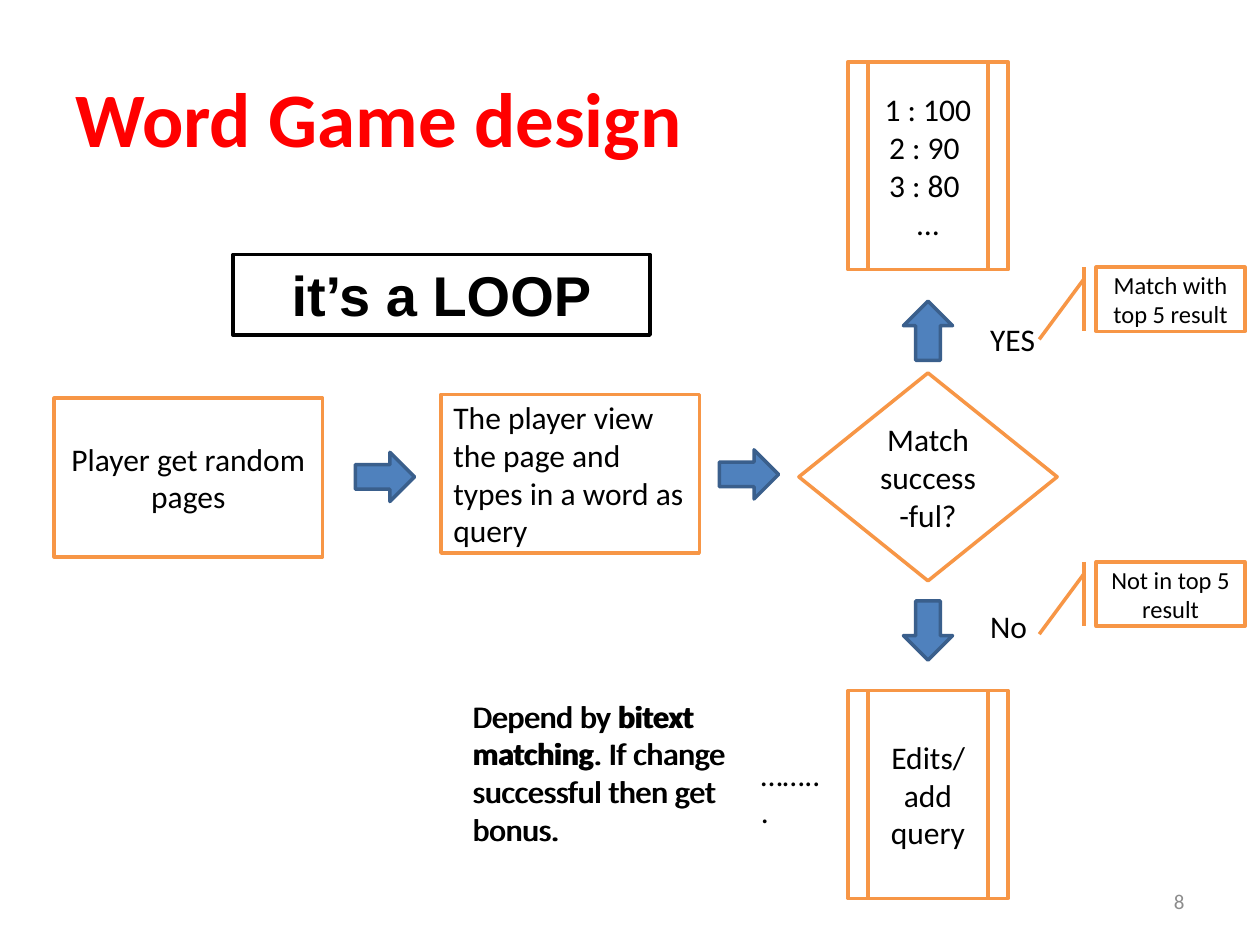
from dataclasses import dataclass

from pptx import Presentation
from pptx.dml.color import RGBColor
from pptx.enum.shapes import MSO_SHAPE as Shape
from pptx.enum.text import MSO_ANCHOR as Anchor, MSO_AUTO_SIZE as AutoSize, PP_ALIGN as Align
from pptx.util import Emu, Pt

EMU_PER_PX = 9144  # 100 px to the inch


@dataclass(frozen=True)
class Theme:
    paper: str = "FFFFFF"
    ink: str = "000000"
    title: str = "FF0000"
    outline: str = "F79646"
    arrow: str = "4F81BD"
    arrow_edge: str = "3A5F8C"
    muted: str = "8C8C8C"
    body_font: str = "Calibri"
    banner_font: str = "Arial"
    title_size: int = 44
    banner_size: int = 32
    body_size: int = 18
    callout_size: int = 14
    number_size: int = 12
    line_width: int = 2


THEME = Theme()


@dataclass(frozen=True)
class Box:
    left: int
    top: int
    width: int
    height: int

    def emu(self) -> list[Emu]:
        return [Emu(px * EMU_PER_PX) for px in (self.left, self.top, self.width, self.height)]


@dataclass(frozen=True)
class Style:
    size: int = THEME.body_size
    color: str = THEME.ink
    font: str = THEME.body_font
    bold: bool = False
    align: Align = Align.LEFT
    anchor: Anchor = Anchor.TOP
    grow: bool = False


@dataclass(frozen=True)
class Node:
    kind: Shape
    box: Box
    text: str
    style: Style
    edge: str = THEME.outline


@dataclass(frozen=True)
class Arrow:
    left: int
    top: int
    rotation: int = 0


@dataclass(frozen=True)
class Label:
    box: Box
    text: str
    style: Style


LABEL = Style(grow=True)
STEP = Style(align=Align.CENTER, anchor=Anchor.MIDDLE)
STEP_LEFT = Style(anchor=Anchor.MIDDLE)
CALLOUT = Style(size=THEME.callout_size, align=Align.CENTER, anchor=Anchor.MIDDLE)
BANNER = Style(size=THEME.banner_size, font=THEME.banner_font, bold=True,
               align=Align.CENTER, grow=True)
TITLE = Style(size=THEME.title_size, color=THEME.title, bold=True, anchor=Anchor.MIDDLE)
NUMBER = Style(size=THEME.number_size, color=THEME.muted, align=Align.RIGHT,
               anchor=Anchor.MIDDLE)

# Flow steps, outcomes, callouts and banner; a new line starts a paragraph
NODES = [
    Node(Shape.FLOWCHART_PROCESS, Box(43, 316, 213, 126), "Player get random pages", STEP),
    Node(Shape.FLOWCHART_PROCESS, Box(350, 313, 205, 126),
         "The player view the page and types in a word as\nquery", STEP_LEFT),
    Node(Shape.FLOWCHART_DECISION, Box(634, 296, 205, 165), "Match success-ful?", STEP),
    Node(Shape.FLOWCHART_PREDEFINED_PROCESS, Box(673, 49, 127, 165),
         "1 : 100\n2 : 90 \n3 : 80 \n…", STEP),
    Node(Shape.FLOWCHART_PREDEFINED_PROCESS, Box(673, 548, 127, 165), "Edits/add query", STEP),
    Node(Shape.LINE_CALLOUT_1_BORDER_AND_ACCENT_BAR, Box(870, 212, 118, 51),
         "Match with top 5 result", CALLOUT),
    Node(Shape.LINE_CALLOUT_1_BORDER_AND_ACCENT_BAR, Box(870, 446, 118, 51),
         "Not in top 5 result", CALLOUT),
    Node(Shape.RECTANGLE, Box(185, 202, 331, 64), "it’s a LOOP", BANNER, THEME.ink),
]

ARROWS = [Arrow(282, 359), Arrow(571, 357), Arrow(713, 243, 270), Arrow(713, 481, 90)]

# Double asterisks enclose bold words
BONUS = "Depend by **bitext matching**. If change successful then get bonus."
LABELS = [
    Label(Box(50, 30, 900, 125), "Word Game design", TITLE),
    Label(Box(776, 249, 94, 40), "YES", LABEL),
    Label(Box(776, 477, 63, 40), "No", LABEL),
    *(Label(Box(left, 548, 236, 131), BONUS, LABEL) for left in (366, 365)),
    Label(Box(594, 594, 71, 40), "……...", LABEL),
    Label(Box(717, 695, 233, 40), "8", NUMBER),
]


def write(frame, text: str, style: Style) -> None:
    frame_format = {
        "word_wrap": True,
        "vertical_anchor": style.anchor,
        "auto_size": AutoSize.SHAPE_TO_FIT_TEXT if style.grow else AutoSize.NONE,
    }
    for name, value in frame_format.items():
        setattr(frame, name, value)
    for index, line in enumerate(text.split("\n")):
        paragraph = frame.add_paragraph() if index else frame.paragraphs[0]
        paragraph.alignment = style.align
        for part, words in enumerate(line.split("**")):
            run = paragraph.add_run()
            run.text = words
            run_format = {"name": style.font, "size": Pt(style.size),
                          "bold": style.bold or part % 2 == 1}
            for name, value in run_format.items():
                setattr(run.font, name, value)
            run.font.color.rgb = RGBColor.from_string(style.color)


def draw_shape(slide, kind: Shape, box: Box, fill: str, edge: str):
    shape = slide.shapes.add_shape(kind, *box.emu())
    shape.shadow.inherit = False
    shape.fill.solid()
    shape.fill.fore_color.rgb = RGBColor.from_string(fill)
    shape.line.color.rgb = RGBColor.from_string(edge)
    shape.line.width = Pt(THEME.line_width)
    return shape


def draw_node(slide, node: Node) -> None:
    shape = draw_shape(slide, node.kind, node.box, THEME.paper, node.edge)
    write(shape.text_frame, node.text, node.style)


def draw_arrow(slide, arrow: Arrow) -> None:
    box = Box(arrow.left, arrow.top, 47, 39)
    shape = draw_shape(slide, Shape.RIGHT_ARROW, box, THEME.arrow, THEME.arrow_edge)
    shape.rotation = arrow.rotation


def draw_label(slide, label: Label) -> None:
    write(slide.shapes.add_textbox(*label.box.emu()).text_frame, label.text, label.style)


def main() -> None:
    deck = Presentation()
    deck.slide_width, deck.slide_height = Emu(1000 * EMU_PER_PX), Emu(750 * EMU_PER_PX)
    slide = deck.slides.add_slide(deck.slide_layouts[6])
    for draw, items in ((draw_node, NODES), (draw_arrow, ARROWS), (draw_label, LABELS)):
        for item in items:
            draw(slide, item)
    deck.save("out.pptx")


if __name__ == "__main__":
    main()
